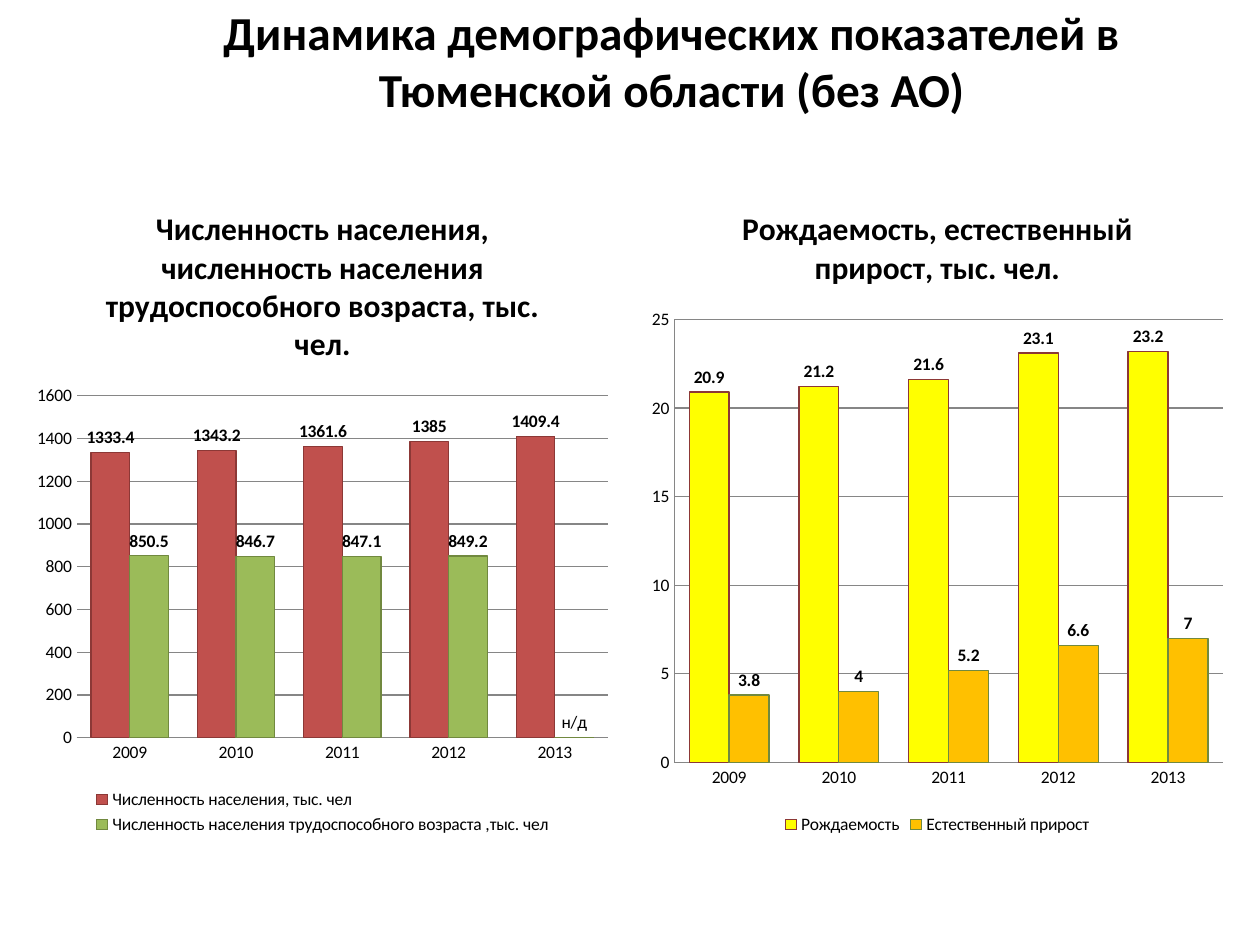
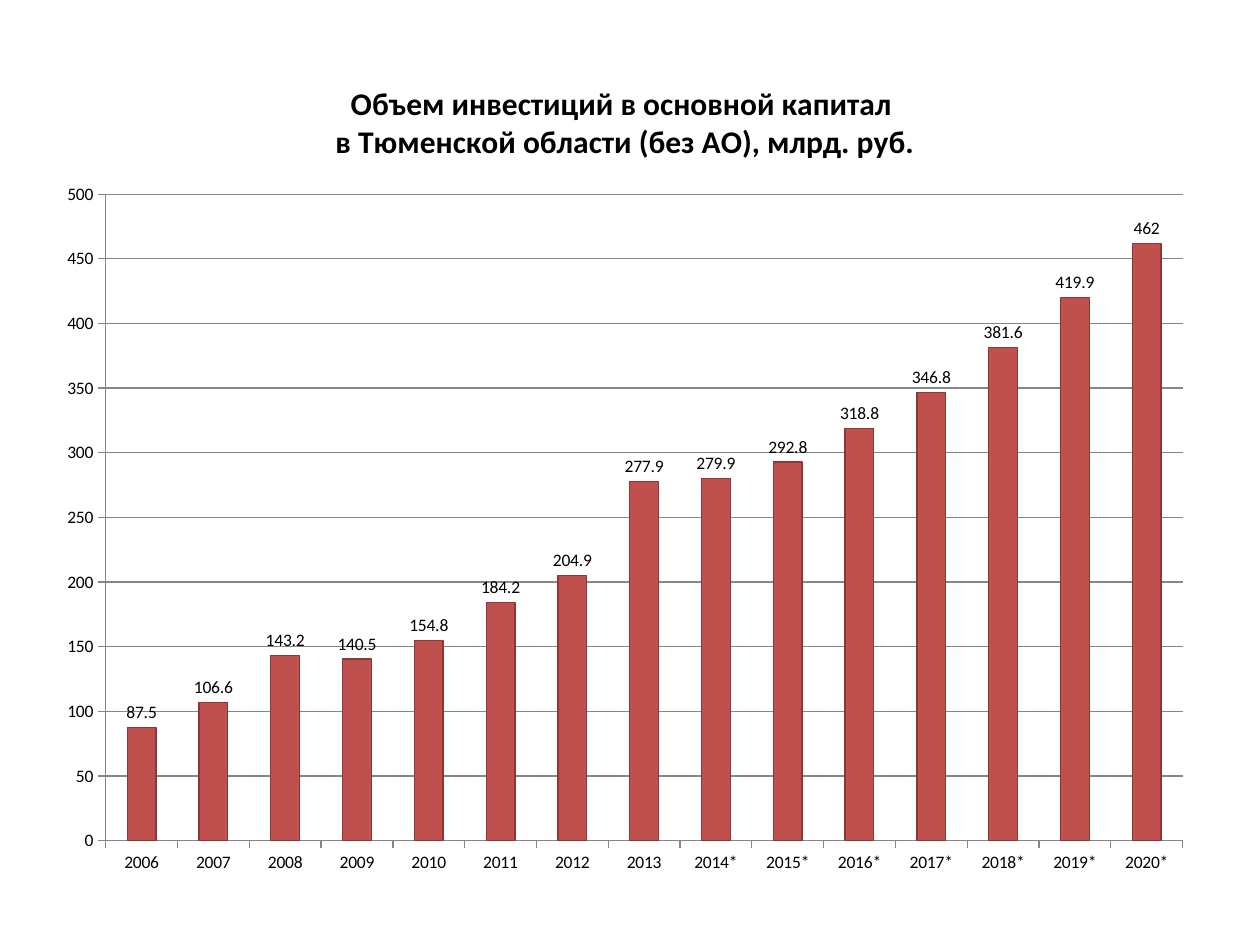
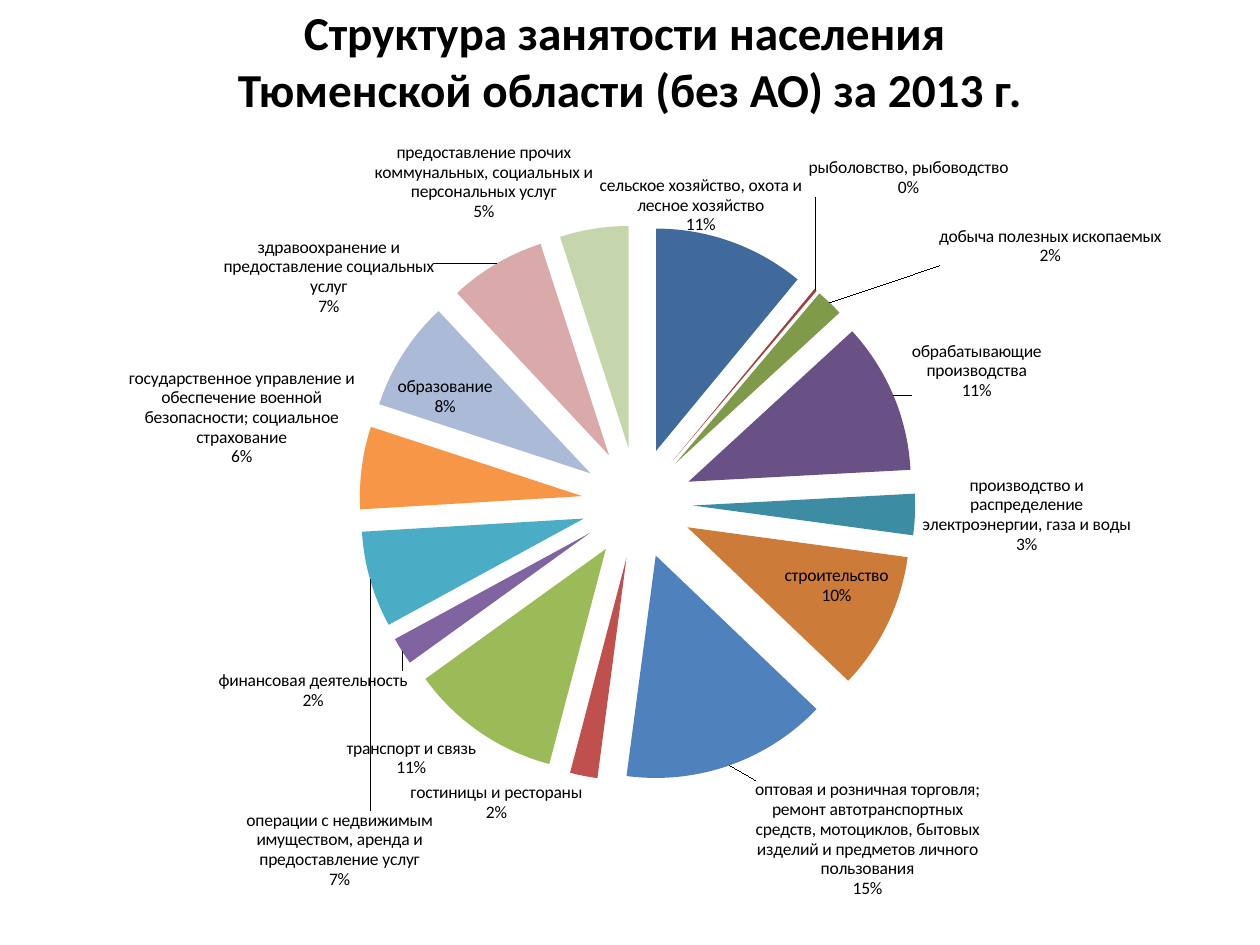
from dataclasses import dataclass

from lxml.etree import SubElement
from pptx import Presentation
from pptx.chart.data import CategoryChartData
from pptx.dml.color import RGBColor
from pptx.enum.chart import XL_CHART_TYPE, XL_LABEL_POSITION, XL_LEGEND_POSITION, XL_TICK_MARK
from pptx.enum.text import MSO_ANCHOR, MSO_AUTO_SIZE, PP_ALIGN
from pptx.oxml import parse_xml
from pptx.oxml.ns import nsdecls, qn
from pptx.util import Inches, Pt


@dataclass(frozen=True)
class Theme:
    font: str = "Calibri"
    text: str = "000000"
    grid: str = "868686"
    red: str = "C0504D"
    red_edge: str = "8C3836"
    green: str = "9BBB59"
    green_edge: str = "71893F"
    yellow: str = "FFFF00"
    amber: str = "FFC000"
    title_size: int = 27
    chart_title_size: int = 18
    label_size: int = 10
    line_width: float = 0.75


THEME = Theme()
PAGE_WIDTH, PAGE_HEIGHT = 10, 7.5
MARGIN, GUTTER = 0.2, 0.16
COLUMN_WIDTH = (PAGE_WIDTH - 2 * MARGIN - GUTTER) / 2
TITLE_TOP, TITLE_HEIGHT = 0.29, 0.38

POPULATION_YEARS = [str(year) for year in range(2009, 2014)]
INVESTMENT_YEARS = [str(year) for year in range(2006, 2014)] + [f"{year}*" for year in range(2014, 2021)]
INVESTMENTS = [87.5, 106.6, 143.2, 140.5, 154.8, 184.2, 204.9, 277.9,
               279.9, 292.8, 318.8, 346.8, 381.6, 419.9, 462]

EMPLOYMENT = [
    ("сельское хозяйство, охота и лесное хозяйство", 11, "406A9C"),
    ("рыболовство, рыбоводство", 0.2, "9E413E"),
    ("добыча полезных ископаемых", 2, "7F9A48"),
    ("обрабатывающие производства", 11, "695185"),
    ("производство и распределение электроэнергии, газа и воды", 3, "3C8DA3"),
    ("строительство", 10, "CC7B38"),
    ("оптовая и розничная торговля; ремонт автотранспортных средств, мотоциклов, "
     "бытовых изделий и предметов личного пользования", 15, "4F81BD"),
    ("гостиницы и рестораны", 2, "C0504D"),
    ("транспорт и связь", 11, "9BBB59"),
    ("финансовая деятельность", 2, "8064A2"),
    ("операции с недвижимым имуществом, аренда и предоставление услуг", 7, "4BACC6"),
    ("государственное управление и обеспечение военной безопасности; "
     "социальное страхование", 6, "F79646"),
    ("образование", 8, "AABAD7"),
    ("здравоохранение и предоставление социальных услуг", 7, "D9AAA9"),
    ("предоставление прочих коммунальных, социальных и персональных услуг", 5, "C6D6AC"),
]
LABEL_SHIFTS = {1: (-0.01, -0.11), 2: (0.09, -0.04), 3: (0.01, 0.01),
                6: (0.02, 0.01), 9: (0.01, 0.02), 10: (0.06, 0.29)}
PIE_AREA = (0.28, 0.12, 0.48, 0.72)


def color(value):
    return RGBColor.from_string(value)


def style_font(font, size, bold=False):
    font.name = THEME.font
    font.size = Pt(size)
    font.bold = bold
    font.color.rgb = color(THEME.text)


def style_line(line, value):
    line.color.rgb = color(value)
    line.width = Pt(THEME.line_width)


def set_title(slide, text, left, width):
    title = slide.shapes.title
    title.left, title.top = Inches(left), Inches(TITLE_TOP)
    title.width, title.height = Inches(width), Inches(TITLE_HEIGHT)
    frame = title.text_frame
    frame.text = text
    frame.word_wrap = True
    frame.auto_size = MSO_AUTO_SIZE.NONE
    frame.vertical_anchor = MSO_ANCHOR.MIDDLE
    for para in frame.paragraphs:
        para.alignment = PP_ALIGN.CENTER
        for span in para.runs:
            style_font(span.font, THEME.title_size, bold=True)


def add_chart(slide, kind, box, categories, series):
    data = CategoryChartData()
    data.categories = categories
    for name, values in series:
        data.add_series(name, values)
    chart = slide.shapes.add_chart(kind, *map(Inches, box), data).chart
    style_font(chart.font, THEME.label_size)
    chart.has_legend = False
    chart.has_title = False
    return chart


def set_chart_title(chart, text):
    chart.has_title = True
    frame = chart.chart_title.text_frame
    frame.text = text
    for para in frame.paragraphs:
        for span in para.runs:
            style_font(span.font, THEME.chart_title_size, bold=True)
    chart.chart_title.include_in_layout = False


def style_axes(chart, tick, value_line):
    for axis in (chart.category_axis, chart.value_axis):
        axis.major_tick_mark = tick
        axis.minor_tick_mark = XL_TICK_MARK.NONE
        style_line(axis.format.line, THEME.grid)
    chart.value_axis.has_major_gridlines = True
    style_line(chart.value_axis.major_gridlines.format.line, THEME.grid)
    if not value_line:
        chart.value_axis.format.line.fill.background()


def add_columns(slide, box, title, categories, series, gap, tick, value_line=True, bold_labels=False):
    chart = add_chart(slide, XL_CHART_TYPE.COLUMN_CLUSTERED, box, categories,
                      [(name, values) for name, values, *_ in series])
    set_chart_title(chart, title)
    style_axes(chart, tick, value_line)
    plot = chart.plots[0]
    plot.gap_width = gap
    plot.overlap = 0
    plot.vary_by_categories = False
    for column, (*_, fill, edge) in zip(plot.series, series):
        column.format.fill.solid()
        column.format.fill.fore_color.rgb = color(fill)
        style_line(column.format.line, edge)
        labels = column.data_labels
        labels.show_value = True
        labels.position = XL_LABEL_POSITION.OUTSIDE_END
        style_font(labels.font, THEME.label_size, bold_labels)
    return chart


def add_bottom_legend(chart):
    chart.has_legend = True
    chart.legend.position = XL_LEGEND_POSITION.BOTTOM
    chart.legend.include_in_layout = False


def mark_missing(chart, series_index, point_index, text):
    label = chart.plots[0].series[series_index].points[point_index].data_label
    label.text_frame.text = text
    style_font(label.text_frame.paragraphs[0].runs[0].font, THEME.label_size)
    label.position = XL_LABEL_POSITION.OUTSIDE_END


def shifted_label(index, shift):
    left, top = shift
    return parse_xml(
        f'<c:dLbl {nsdecls("c")}><c:idx val="{index}"/>'
        f'<c:layout><c:manualLayout><c:x val="{left}"/><c:y val="{top}"/></c:manualLayout></c:layout>'
        '<c:dLblPos val="bestFit"/><c:showLegendKey val="0"/><c:showVal val="0"/>'
        '<c:showCatName val="1"/><c:showSerName val="0"/><c:showPercent val="1"/>'
        '<c:showBubbleSize val="0"/><c:separator>\n</c:separator></c:dLbl>')


def label_slices(slices):
    labels = slices.data_labels
    labels.show_value = False
    labels.show_category_name = True
    labels.show_percentage = True
    labels.number_format = "0%"
    labels.number_format_is_linked = False
    labels.position = XL_LABEL_POSITION.BEST_FIT
    style_font(labels.font, THEME.label_size)
    element = slices._element.find(qn("c:dLbls"))
    for tag in ("c:separator", "c:showLeaderLines"):
        for old in element.findall(qn(tag)):
            element.remove(old)
    SubElement(element, qn("c:separator")).text = "\n"
    SubElement(element, qn("c:showLeaderLines")).set("val", "1")
    for order, (index, shift) in enumerate(LABEL_SHIFTS.items()):
        element.insert(order, shifted_label(index, shift))


def place_plot(chart, area):
    plot_area = chart._chartSpace.find(f'.//{qn("c:plotArea")}')
    for old in plot_area.findall(qn("c:layout")):
        plot_area.remove(old)
    sizes = "".join(f'<c:{name} val="{share}"/>' for name, share in zip("xywh", area))
    plot_area.insert(0, parse_xml(
        f'<c:layout {nsdecls("c")}><c:manualLayout><c:layoutTarget val="inner"/>'
        f'<c:xMode val="edge"/><c:yMode val="edge"/>{sizes}</c:manualLayout></c:layout>'))


def add_exploded_pie(slide, box, sectors, explosion):
    names, values, fills = zip(*sectors)
    chart = add_chart(slide, XL_CHART_TYPE.PIE, box, names, [("Series 1", values)])
    chart.plots[0].vary_by_categories = True
    slices = chart.plots[0].series[0]
    slices._element.find(qn("c:tx")).addnext(
        parse_xml(f'<c:explosion {nsdecls("c")} val="{explosion}"/>'))
    for index, fill in enumerate(fills):
        point_fill = slices.points[index].format.fill
        point_fill.solid()
        point_fill.fore_color.rgb = color(fill)
    label_slices(slices)
    place_plot(chart, PIE_AREA)


def add_population_slide(deck):
    slide = deck.slides.add_slide(deck.slide_layouts[5])
    set_title(slide, "Динамика демографических показателей в Тюменской области (без АО)", 0.83, 9)
    charts = [
        ("Численность населения, численность населения трудоспособного возраста, тыс. чел.", False, [
            ("Численность населения, тыс. чел", [1333.4, 1343.2, 1361.6, 1385, 1409.4],
             THEME.red, THEME.red_edge),
            ("Численность населения трудоспособного возраста ,тыс. чел", [850.5, 846.7, 847.1, 849.2, 0],
             THEME.green, THEME.green_edge)]),
        ("Рождаемость, естественный прирост, тыс. чел.", True, [
            ("Рождаемость", [20.9, 21.2, 21.6, 23.1, 23.2], THEME.yellow, THEME.red_edge),
            ("Естественный прирост", [3.8, 4, 5.2, 6.6, 7], THEME.amber, THEME.green_edge)]),
    ]
    drawn = []
    for column, (title, value_line, series) in enumerate(charts):
        box = (MARGIN + column * (COLUMN_WIDTH + GUTTER), 1.44, COLUMN_WIDTH, 5.22)
        chart = add_columns(slide, box, title, POPULATION_YEARS, series, 75,
                            XL_TICK_MARK.NONE, value_line, bold_labels=True)
        add_bottom_legend(chart)
        drawn.append(chart)
    mark_missing(drawn[0], 1, 4, "н/д")


def add_investment_slide(deck):
    slide = deck.slides.add_slide(deck.slide_layouts[6])
    add_columns(slide, (0.35, 0.44, 9.22, 6.62),
                "Объем инвестиций в основной капитал \nв Тюменской области (без АО), млрд. руб.",
                INVESTMENT_YEARS, [("Series 1", INVESTMENTS, THEME.red, THEME.red_edge)],
                150, XL_TICK_MARK.OUTSIDE)


def add_employment_slide(deck):
    slide = deck.slides.add_slide(deck.slide_layouts[5])
    set_title(slide, "Структура занятости населения \nТюменской области (без АО) за 2013 г.", 0, PAGE_WIDTH)
    add_exploded_pie(slide, (0.28, 0.99, 9.19, 6.26), EMPLOYMENT, 25)


def main():
    deck = Presentation()
    deck.slide_width, deck.slide_height = Inches(PAGE_WIDTH), Inches(PAGE_HEIGHT)
    add_population_slide(deck)
    add_investment_slide(deck)
    add_employment_slide(deck)
    deck.save("out.pptx")


if __name__ == "__main__":
    main()
